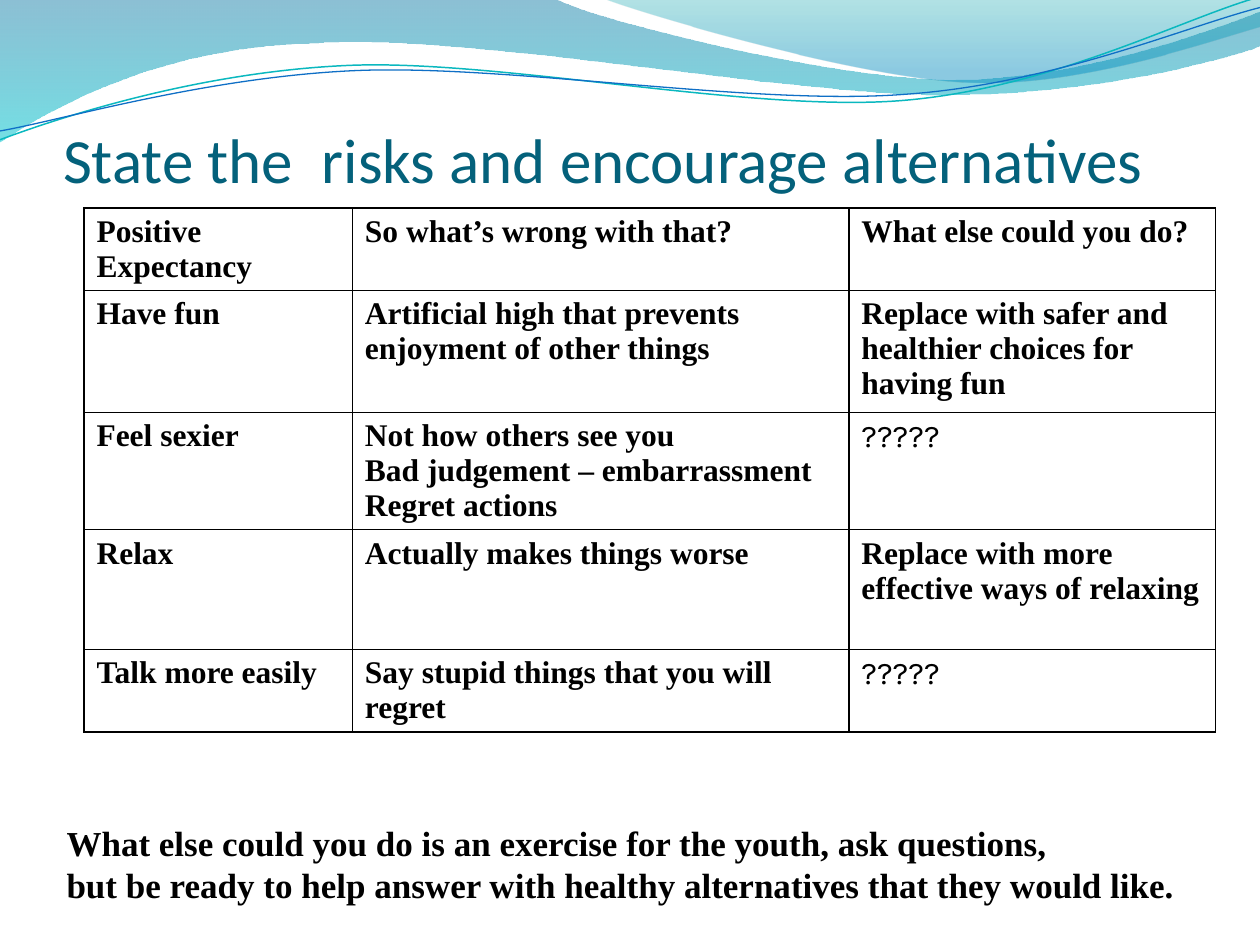
from math import cos, radians, sin

from lxml.etree import SubElement
from pptx import Presentation
from pptx.dml.color import RGBColor
from pptx.enum.text import MSO_ANCHOR as Anchor, MSO_AUTO_SIZE as AutoSize
from pptx.oxml.ns import qn
from pptx.util import Inches, Pt

WIDTH, HEIGHT = 10, 7.5
SERIF, SANS = "Times New Roman", "Karla"
BLACK = "000000"
UNITS = 1000  # freeform units per inch
TILT = -2.7   # degrees, for both wave lines

COLUMNS = [2.13, 3.94, 2.91]
ROWS = [0.65, 0.97, 0.93, 0.95, 0.65]
UNKNOWN = "?????"
RISKS = [
    ["Positive Expectancy", "So what’s wrong with that?", "What else could you do?"],
    ["Have fun", "Artificial high that prevents enjoyment of other things",
     "Replace with safer and healthier choices for having fun"],
    ["Feel sexier",
     "Not how others see you\nBad judgement – embarrassment\nRegret actions", UNKNOWN],
    ["Relax", "Actually makes things worse",
     "Replace with more effective ways of relaxing"],
    ["Talk more easily", "Say stupid things that you will regret", UNKNOWN],
]

# Wave outlines in inches: one point is a straight step, three points a Bezier curve
BIG_WAVE = [[(0, 0)], [(4.4, -0.01)], [(4.76, 0.17), (6.64, 0.63), (7.58, 0.63)],
            [(8.53, 0.63), (9.58, 0.26), (10, 0.09)], [(10.01, 0.36)],
            [(9.83, 0.44), (8.7, 0.76), (7.46, 0.75)],
            [(6.22, 0.75), (3.82, 0.28), (2.57, 0.34)],
            [(1.29, 0.36), (0.46, 0.83), (-0.01, 1.13)], [(0, 0)]]
SMALL_WAVE = [[(4.79, -0.01)], [(5.09, 0.11), (6.82, 0.62), (7.69, 0.65)],
              [(8.56, 0.69), (9.61, 0.32), (10, 0.21)], [(10, 0)], [(4.79, -0.01)]]
TEAL_LINE = [[(0, 1.11)], [(0.48, 0.93), (1.58, 0.57), (2.77, 0.52)],
             [(3.95, 0.47), (5.93, 0.89), (7.13, 0.8)],
             [(8.33, 0.71), (9.38, 0.15), (9.98, -0.02)]]
BLUE_LINE = [[(0, 1.04)], [(0.47, 0.96), (1.64, 0.61), (2.83, 0.56)],
             [(4.03, 0.51), (5.97, 0.84), (7.17, 0.75)],
             [(8.36, 0.67), (9.41, 0.21), (10, 0.06)]]


def color(value):
    return RGBColor.from_string(value)


def write(frame, text, font=SERIF, size=18, bold=True, ink=BLACK):
    for index, line in enumerate(text.split("\n")):
        para = frame.paragraphs[0] if index == 0 else frame.add_paragraph()
        run = para.add_run()
        run.text = line
        run.font.name, run.font.size, run.font.bold = font, Pt(size), bold
        run.font.color.rgb = color(ink)


def add_outline(slide, box, steps, close=True, tilt=0):
    """Draw steps inside box; tilt is undone in the points and set on the shape."""
    left, top, width, height = box
    builder = slide.shapes.build_freeform(
        round(left * UNITS), round(top * UNITS), scale=Inches(1) / UNITS)
    builder.add_line_segments(
        [(round((left + width) * UNITS), round((top + height) * UNITS))], close=False)
    shape = builder.convert_to_shape()
    shape.shadow.inherit = False
    shape.rotation = tilt

    path = next(shape._element.iter(qn("a:path")))
    for segment in list(path):
        path.remove(segment)
    c, s = cos(radians(-tilt)), sin(radians(-tilt))
    for index, points in enumerate(steps):
        kind = "moveTo" if index == 0 else "lnTo" if len(points) == 1 else "cubicBezTo"
        segment = SubElement(path, qn("a:" + kind))
        for x, y in points:
            dx, dy = x - left - width / 2, y - top - height / 2
            px, py = width / 2 + dx * c - dy * s, height / 2 + dx * s + dy * c
            SubElement(segment, qn("a:pt"), x=str(round(px * UNITS)),
                       y=str(round(py * UNITS)))
    if close:
        SubElement(path, qn("a:close"))
    return shape


def add_wave(slide, box, steps, stops):
    wave = add_outline(slide, box, steps)
    wave.line.fill.background()
    wave.fill.gradient()
    wave.fill.gradient_angle = 270
    for stop, (position, tint, _) in zip(wave.fill.gradient_stops, stops):
        stop.position = position
        stop.color.rgb = color(tint)
    # Opacity of each stop
    tints = wave._element.spPr.iter(qn("a:srgbClr"))
    for tint, (_, _, opacity) in zip(tints, stops):
        SubElement(tint, qn("a:alpha"), val=str(opacity * 1000))


def add_wave_line(slide, box, steps, ink, width):
    wave = add_outline(slide, box, steps, close=False, tilt=TILT)
    wave.fill.background()
    wave.line.color.rgb = color(ink)
    wave.line.width = Pt(width)


def border(cell, ink=BLACK, width=1):
    props = cell._tc.get_or_add_tcPr()
    for index, side in enumerate(("a:lnL", "a:lnR", "a:lnT", "a:lnB")):
        line = props.makeelement(qn(side), {"w": str(Pt(width))})
        SubElement(SubElement(line, qn("a:solidFill")), qn("a:srgbClr"), val=ink)
        props.insert(index, line)


def add_risk_table(slide, left, top):
    table = slide.shapes.add_table(
        len(ROWS), len(COLUMNS), Inches(left), Inches(top),
        Inches(sum(COLUMNS)), Inches(sum(ROWS))).table
    table.first_row = table.horz_banding = False
    for column, width in zip(table.columns, COLUMNS):
        column.width = Inches(width)
    for row, height, texts in zip(table.rows, ROWS, RISKS):
        row.height = Inches(height)
        for cell, text in zip(row.cells, texts):
            known = text != UNKNOWN
            write(cell.text_frame, text, font=SERIF if known else SANS, bold=known)
            cell.fill.background()
            border(cell)


def add_note(slide, left, top, width, height, text):
    frame = slide.shapes.add_textbox(*map(Inches, (left, top, width, height))).text_frame
    frame.word_wrap = False
    frame.auto_size = AutoSize.SHAPE_TO_FIT_TEXT
    frame.vertical_anchor = Anchor.MIDDLE
    write(frame, text, size=20)


def set_title(slide, text):
    title = slide.shapes.title
    title.left, title.top = Inches(0.05 * WIDTH), Inches(0.42)
    title.width, title.height = Inches(0.9 * WIDTH), Inches(1.14)
    frame = title.text_frame
    frame.margin_left = frame.margin_right = frame.margin_bottom = 0
    frame.margin_top = Inches(0.05)
    frame.vertical_anchor = Anchor.BOTTOM
    write(frame, text, font="Calibri", size=36, bold=False, ink="04617B")
    # The layout centres titles
    frame.paragraphs[0]._p.get_or_add_pPr().set("algn", "l")
    slide.shapes._spTree.append(title._element)  # in front of the waves


def main():
    deck = Presentation()
    deck.slide_width, deck.slide_height = Inches(WIDTH), Inches(HEIGHT)
    slide = deck.slides.add_slide(deck.slide_layouts[5])

    # Wave banner
    add_wave(slide, (-0.01, -0.01, 10.02, 1.14), BIG_WAVE,
             [(0, "0074A1", 45), (1, "00C6CF", 55)])
    add_wave(slide, (4.79, -0.01, 5.21, 0.7), SMALL_WAVE,
             [(0, "00A1A9", 30), (0.8, "008BBF", 45)])
    add_wave_line(slide, (-0.02, 0.22, 10.02, 0.71), TEAL_LINE, "0AB8BF", 0.85)
    add_wave_line(slide, (-0.02, 0.3, 10.03, 0.58), BLUE_LINE, "0F6FC6", 0.75)

    # Content
    add_risk_table(slide, WIDTH / 15, 1.65)
    add_note(slide, 0.43, 6.47, 9.06, 0.77,
             "What else could you do is an exercise for the youth, ask questions,\n"
             "but be ready to help answer with healthy alternatives that they would like.")
    set_title(slide, "State the  risks and encourage alternatives")

    deck.save("out.pptx")


if __name__ == "__main__":
    main()
